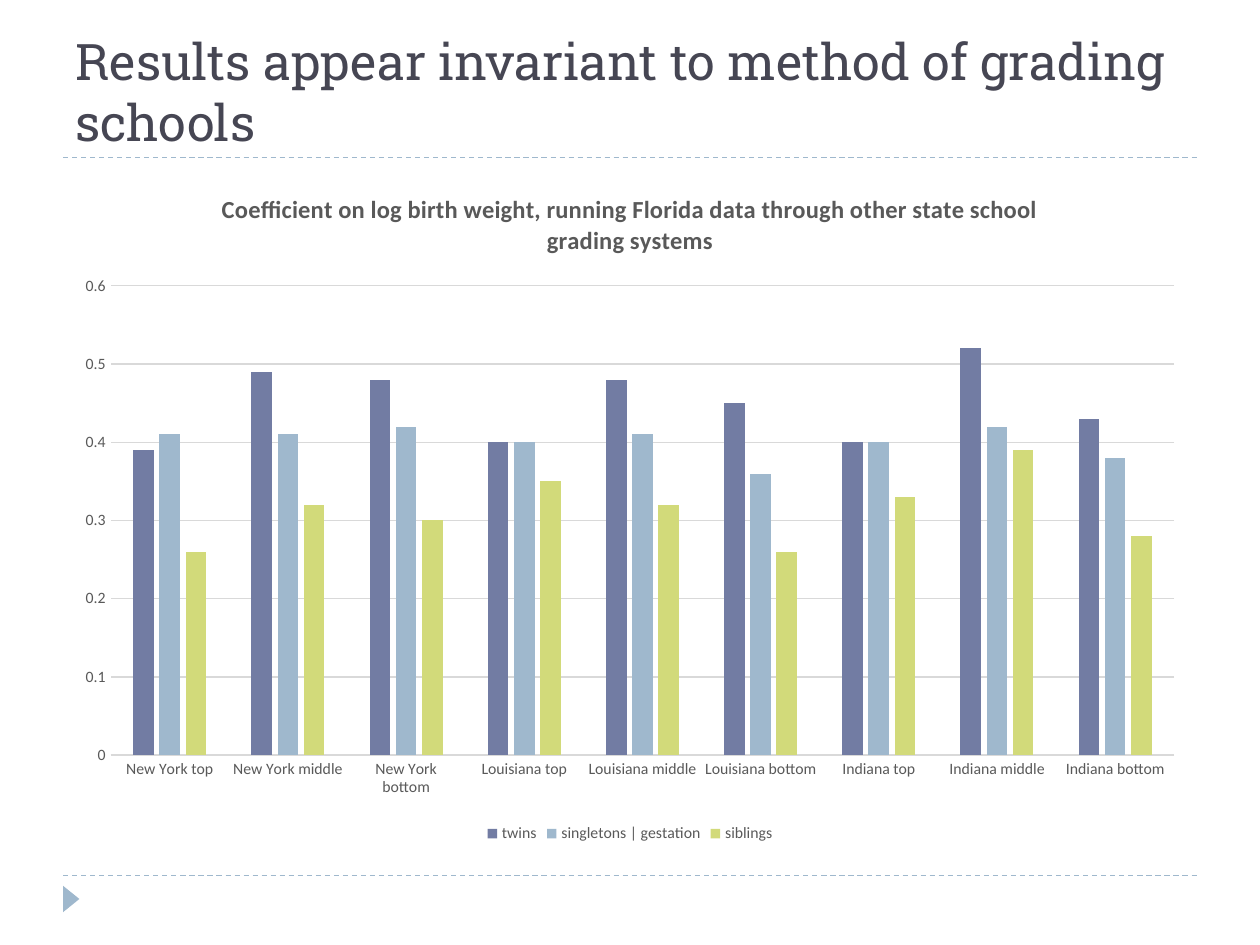
from dataclasses import dataclass

from lxml import etree
from pptx import Presentation
from pptx.chart.data import CategoryChartData
from pptx.dml.color import RGBColor
from pptx.enum.chart import XL_CHART_TYPE, XL_LEGEND_POSITION, XL_TICK_MARK
from pptx.enum.dml import MSO_LINE
from pptx.enum.shapes import MSO_CONNECTOR, MSO_SHAPE
from pptx.enum.text import MSO_ANCHOR, MSO_AUTO_SIZE, PP_ALIGN
from pptx.oxml.ns import qn
from pptx.util import Inches, Pt

CLUSTERED = XL_CHART_TYPE.COLUMN_CLUSTERED
LEGEND_BOTTOM = XL_LEGEND_POSITION.BOTTOM
NO_TICK = XL_TICK_MARK.NONE
DASH = MSO_LINE.DASH
STRAIGHT = MSO_CONNECTOR.STRAIGHT
TRIANGLE = MSO_SHAPE.ISOSCELES_TRIANGLE
BOTTOM = MSO_ANCHOR.BOTTOM
FIXED_SIZE = MSO_AUTO_SIZE.NONE
LEFT = PP_ALIGN.LEFT

WIDTH, HEIGHT = 10, 7.5
MARGIN = WIDTH / 20
CONTENT = WIDTH - 2 * MARGIN
HEADER_RULE, FOOTER_RULE = 1.25, 6.95

STATES = ("New York", "Louisiana", "Indiana")
GRADES = ("top", "middle", "bottom")
COEFFICIENTS = {
    "twins": (0.39, 0.49, 0.48, 0.4, 0.48, 0.45, 0.4, 0.52, 0.43),
    "singletons | gestation": (0.41, 0.41, 0.42, 0.4, 0.41, 0.36, 0.4, 0.42, 0.38),
    "siblings": (0.26, 0.32, 0.3, 0.35, 0.32, 0.26, 0.33, 0.39, 0.28),
}


@dataclass(frozen=True)
class Theme:
    """Colours, fonts and type sizes of the slide."""
    heading: str = "464653"
    label: str = "595959"
    grid: str = "D9D9D9"
    accent: str = "9FB8CD"
    series: tuple = ("727CA3", "9FB8CD", "D2DA7A")
    heading_font: str = "Roboto Slab"
    chart_font: str = "Calibri"
    heading_size: float = 28.8
    chart_title_size: float = 14
    label_size: float = 9
    hairline: float = 0.75


THEME = Theme()


def style_font(font, name, size, colour, bold=False):
    """Set face, size, colour and weight of a font."""
    font.name, font.size, font.bold = name, Pt(size), bold
    font.color.rgb = RGBColor.from_string(colour)


def style_line(line, colour):
    """Give a line the hairline width and a colour."""
    line.width = Pt(THEME.hairline)
    line.color.rgb = RGBColor.from_string(colour)


def add_heading(slide, text):
    """Place the slide title above the header rule."""
    heading = slide.shapes.title
    heading.left, heading.top = Inches(MARGIN), Inches(0.17)
    heading.width, heading.height = Inches(CONTENT), Inches(HEADER_RULE - 0.17)
    frame = heading.text_frame
    frame.text = text
    frame.word_wrap, frame.auto_size = True, FIXED_SIZE
    frame.vertical_anchor = BOTTOM
    paragraph = frame.paragraphs[0]
    paragraph.alignment = LEFT
    style_font(paragraph.font, THEME.heading_font, THEME.heading_size, THEME.heading)


def add_rule(slide, y):
    """Draw a dashed rule across the content width."""
    rule = slide.shapes.add_connector(
        STRAIGHT, Inches(MARGIN), Inches(y), Inches(MARGIN + CONTENT), Inches(y))
    style_line(rule.line, THEME.accent)
    rule.line.dash_style = DASH
    etree.SubElement(rule._element.spPr, qn("a:effectLst"))


def add_page_marker(slide):
    """Draw the right-pointing triangle below the footer rule."""
    marker = slide.shapes.add_shape(
        TRIANGLE, Inches(0.46), Inches(7.07), Inches(0.21), Inches(0.13))
    marker.rotation = 90
    marker.shadow.inherit = False
    marker.fill.solid()
    marker.fill.fore_color.rgb = RGBColor.from_string(THEME.accent)
    marker.line.fill.background()


def style_axis(axis):
    """Remove tick marks and set the label font of an axis."""
    axis.major_tick_mark = axis.minor_tick_mark = NO_TICK
    style_font(axis.tick_labels.font, THEME.chart_font, THEME.label_size, THEME.label)


def add_coefficient_chart(slide, title):
    """Add the clustered columns of coefficients by state and grade."""
    data = CategoryChartData()
    data.categories = [f"{state} {grade}" for state in STATES for grade in GRADES]
    for name, values in COEFFICIENTS.items():
        data.add_series(name, values)
    chart = slide.shapes.add_chart(
        CLUSTERED, Inches(MARGIN), Inches(1.33), Inches(CONTENT), Inches(5.4), data).chart
    style_font(chart.font, THEME.chart_font, 10, "000000")

    chart.has_title = True
    chart.chart_title.include_in_layout = False
    chart.chart_title.text_frame.text = title
    style_font(chart.chart_title.text_frame.paragraphs[0].font, THEME.chart_font,
               THEME.chart_title_size, THEME.label, bold=True)

    chart.has_legend = True
    chart.legend.position = LEGEND_BOTTOM
    chart.legend.include_in_layout = False
    style_font(chart.legend.font, THEME.chart_font, THEME.label_size, THEME.label)

    style_axis(chart.category_axis)
    style_line(chart.category_axis.format.line, THEME.grid)
    coefficients = chart.value_axis
    style_axis(coefficients)
    coefficients.minimum_scale, coefficients.maximum_scale = 0, 0.6
    coefficients.major_unit = 0.1
    coefficients.format.line.fill.background()
    style_line(coefficients.major_gridlines.format.line, THEME.grid)

    columns = chart.plots[0]
    columns.gap_width, columns.overlap = 219, -27
    columns.vary_by_categories = False
    for series, colour in zip(columns.series, THEME.series):
        series.format.fill.solid()
        series.format.fill.fore_color.rgb = RGBColor.from_string(colour)


def main():
    """Build the slide and save it."""
    deck = Presentation()
    deck.slide_width, deck.slide_height = Inches(WIDTH), Inches(HEIGHT)
    slide = deck.slides.add_slide(deck.slide_layouts[5])
    for y in (FOOTER_RULE, HEADER_RULE):
        add_rule(slide, y)
    add_page_marker(slide)
    add_heading(slide, "Results appear invariant to method of grading schools")
    add_coefficient_chart(
        slide, "Coefficient on log birth weight, running Florida data "
               "through other state school grading systems")
    deck.save("out.pptx")


if __name__ == "__main__":
    main()
